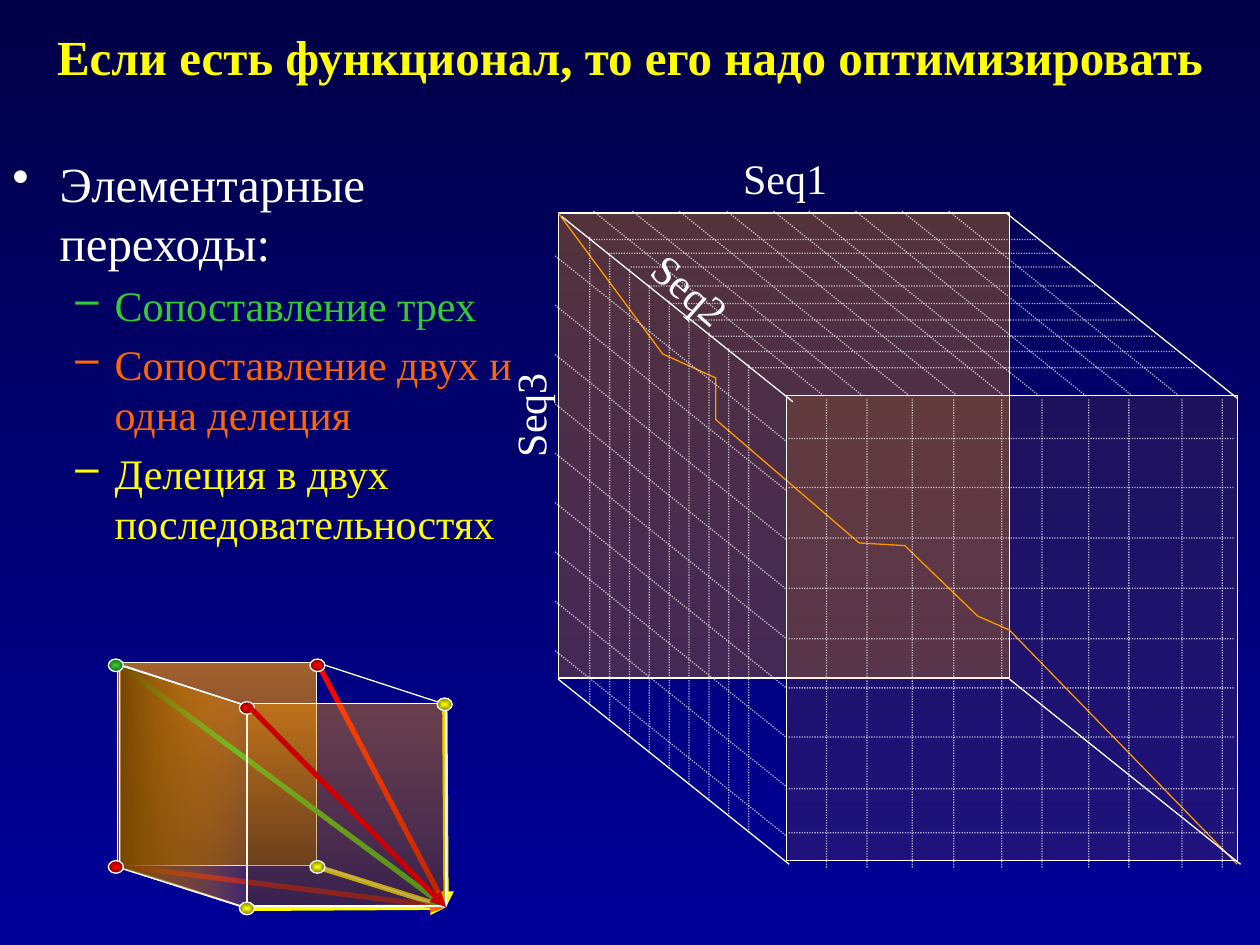
import pptx
import pptx.util
import pptx.dml.color
import pptx.enum.dml
import pptx.enum.shapes
import pptx.enum.text
import pptx.oxml
import pptx.oxml.ns
from lxml import etree

Pt = pptx.util.Pt
RGB = pptx.dml.color.RGBColor.from_string
qn = pptx.oxml.ns.qn
SHAPE = pptx.enum.shapes.MSO_SHAPE
FONT = "Times New Roman"
COLORS = {
    "night": "000047", "blue": "000099", "white": "FFFFFF",
    "yellow": "FFFF00", "olive": "767600", "red": "FF0000",
    "maroon": "760000", "crimson": "CC0000", "green": "33CC33",
    "moss": "185E18", "orange": "FF9900", "amber": "D17D00",
    "brown": "764700", "coral": "FF6600",
}

TITLE = "Если есть функционал, то его надо оптимизировать"
BULLETS = [
    ("•", "Элементарные переходы:", 28, "white", 27, 27),
    ("–", "Сопоставление трех", 24, "green", 58.5, 22.5),
    ("–", "Сопоставление двух и одна делеция", 24, "coral", 58.5, 22.5),
    ("–", "Делеция в двух последовательностях", 24, "yellow", 58.5, 22.5),
]
AXES = [("Seq1", 417.6, 83.5, 0), ("Seq2", 363.6, 147.6, 41.3),
        ("Seq3", 271.4, 218.9, 270)]

BACK_FACE = (319, 121.7, 257.8, 265.7)
FRONT_FACE = (449.3, 226.1, 257.8, 265.7)
DEPTH = (132, 105.8)
CUBE_EDGES = [(319, 388.1), (321.1, 123.8), (575.3, 122), (576.9, 388.1)]
ALIGNMENT = [(319, 121.7), (378.7, 202.3), (409, 216), (409, 239.8),
             (491, 310.3), (517, 311.8), (558.7, 352.1), (576.7, 360),
             (707, 493.9)]
GRID_COUNT = 9
SIDE_STEP = 11.35
FRONT_X = [472.3, 495.4, 521.3, 545, 572.4, 595.4, 622.1, 645.1, 675.4, 698.4]
FRONT_Y = [250.6, 278.6, 307.4, 336.2, 365, 393.1, 421.2, 450.7, 475.9]
TOP_X = [542.2, 515.5, 488.9, 462.2, 442.1, 415.4, 388.1, 361.4, 339.1]
TOP_Y = [136.8, 144.7, 152.6, 163.4, 173.5, 182.9, 192.2, 200.9, 210.2]

GOAL = (254.9, 518.4)
BACK_MOVES = [((182.2, 380.2), "red", 100), ((140.4, 519.1), "yellow", 100),
              ((254.2, 402.5), "yellow", 100), ((181.4, 495.4), "yellow", 100),
              ((67, 494.6), "red", 58)]
CELL_BACK = (67, 378.7, 113.8, 115.9)
CELL_FRONT = (141.1, 401.8, 113.8, 115.9)
CELL_SIDE = (35.3, 413.3, 139, 72.7)
CELL_DEPTH = (73, 23.8)
CELL_EDGES = [(67, 494.6), (180.9, 494.6), (67.7, 379.4), (181.4, 378.7)]
NODE_SIZE = (8.6, 7.2)
NODE_SHADES = {"yellow": "olive", "red": "maroon", "green": "moss"}
NODES = [(136.8, 515.5, "yellow"), (61.9, 491.8, "red"),
         (136.8, 401, "red"), (61.9, 376.6, "green"),
         (177.1, 376.6, "red"), (249.8, 398.9, "yellow")]


def set_alpha(clr, percent):
    if percent < 100:
        etree.SubElement(clr, qn("a:alpha"), val=str(percent * 1000))


def set_gradient(fill, names):
    fill.gradient()
    fill.gradient_angle = 270
    for stop, name in zip(fill.gradient_stops, names):
        stop.color.rgb = RGB(COLORS[name])
    fill.gradient_stops[0].position = 0
    fill.gradient_stops[1].position = 1


def add_line(s, start, end, color="white", width=0.75, alpha=100,
             dotted=False, arrow=False):
    sp = s.shapes.add_connector(pptx.enum.shapes.MSO_CONNECTOR.STRAIGHT,
                                *[Pt(v) for v in (*start, *end)])
    sp.line.width = Pt(width)
    sp.line.color.rgb = RGB(COLORS[color])
    if dotted:
        sp.line.dash_style = pptx.enum.dml.MSO_LINE.ROUND_DOT
    spPr = sp.element.spPr
    ln = spPr.find(qn("a:ln"))
    set_alpha(next(ln.iter(qn("a:srgbClr"))), alpha)
    if arrow:
        etree.SubElement(ln, qn("a:tailEnd"), type="triangle")
    etree.SubElement(spPr, qn("a:effectLst"))


def add_edges(s, starts, depth, **style):
    for x, y in starts:
        add_line(s, (x, y), (x + depth[0], y + depth[1]), **style)


def add_solid(s, kind, box, names, alphas=(100, 100), radial=False):
    sp = s.shapes.add_shape(kind, *[Pt(v) for v in box])
    sp.shadow.inherit = False
    set_gradient(sp.fill, names)
    grad = sp.element.spPr.find(qn("a:gradFill"))
    for clr, alpha in zip(grad.iter(qn("a:srgbClr")), alphas):
        set_alpha(clr, alpha)
    if radial:
        grad.remove(grad.find(qn("a:lin")))
        center = etree.SubElement(grad, qn("a:path"), path="shape")
        etree.SubElement(center, qn("a:fillToRect"),
                         l="50000", t="50000", r="50000", b="50000")
    sp.line.color.rgb = RGB(COLORS["white"])
    sp.line.width = Pt(0.75)
    return sp


def add_box(s, x, y, w, h, wrap=True):
    sp = s.shapes.add_textbox(Pt(x), Pt(y), Pt(w), Pt(h))
    sp.text_frame.word_wrap = wrap
    return sp


def add_run(p, text, size, color, bold=False):
    r = p.add_run()
    r.text = text
    r.font.name = FONT
    r.font.size = Pt(size)
    r.font.bold = bold
    r.font.color.rgb = RGB(COLORS[color])


def add_texts(s):
    tf = add_box(s, 0, 0, 720, 64).text_frame
    tf.vertical_anchor = pptx.enum.text.MSO_ANCHOR.MIDDLE
    p = tf.paragraphs[0]
    p.alignment = pptx.enum.text.PP_ALIGN.CENTER
    add_run(p, TITLE, 28, "yellow", True)

    tf = add_box(s, 0, 84.2, 300.2, 278).text_frame
    for i, (mark, text, size, color, left, hang) in enumerate(BULLETS):
        p = tf.add_paragraph() if i else tf.paragraphs[0]
        p.space_before = Pt(size * 0.2)
        p.level = 1 if i else 0
        add_run(p, text, size, color)
        pPr = p._p.get_or_add_pPr()
        pPr.set("marL", str(Pt(left)))
        pPr.set("indent", str(-Pt(hang)))
        etree.SubElement(pPr, qn("a:buChar"), char=mark)

    for text, x, y, angle in AXES:
        sp = add_box(s, x, y, 62.6, 36, wrap=False)
        sp.text_frame.auto_size = pptx.enum.text.MSO_AUTO_SIZE.SHAPE_TO_FIT_TEXT
        sp.rotation = angle
        add_run(sp.text_frame.paragraphs[0], text, 24, "white")


def add_grid(s):
    dots = {"alpha": 65, "dotted": True}
    side = [(337 + SIDE_STEP * i, 135.4 + 9.1 * i) for i in range(GRID_COUNT)]
    rows = [(317.2, 146.2 + 28.2 * i) for i in range(GRID_COUNT)]
    top = [(337.7 + SIDE_STEP * i, y) for i, y in enumerate(TOP_Y)]
    add_edges(s, side, (0, 268), **dots)
    add_edges(s, [(x, 228.2) for x in FRONT_X], (0, 268), **dots)
    add_edges(s, [(x, 120.7) for x in TOP_X] + rows, DEPTH, **dots)
    add_edges(s, [(450.7, y) for y in FRONT_Y] + top, (254.5, 0), **dots)


def add_big_cube(s):
    add_solid(s, SHAPE.RECTANGLE, BACK_FACE, ("orange", "amber"), (33, 33))
    points = [(Pt(x), Pt(y)) for x, y in ALIGNMENT]
    fb = s.shapes.build_freeform(*points[0])
    fb.add_line_segments(points[1:], close=False)
    sp = fb.convert_to_shape()
    sp.shadow.inherit = False
    sp.fill.background()
    sp.line.color.rgb = RGB(COLORS["orange"])
    sp.line.width = Pt(0.75)
    add_solid(s, SHAPE.RECTANGLE, FRONT_FACE, ("orange", "amber"), (12, 15))
    add_edges(s, CUBE_EDGES, DEPTH)


def add_cell(s):
    wood = ("orange", "brown")
    add_solid(s, SHAPE.RECTANGLE, CELL_BACK, wood, (64, 64))
    add_edges(s, CELL_EDGES, CELL_DEPTH)
    add_line(s, (67.7, 379.4), GOAL, "green", 3, arrow=True)
    add_solid(s, SHAPE.RECTANGLE, CELL_FRONT, wood, (42, 48))
    add_node(s, 177.1, 491.8, "yellow")
    sp = add_solid(s, SHAPE.PARALLELOGRAM, CELL_SIDE, wood, (24, 100))
    sp.adjustments[0] = 0.32
    sp.rotation = 90
    for node in NODES:
        add_node(s, *node)
    add_line(s, (141.1, 402.5), GOAL, "crimson", 3, arrow=True)


def add_node(s, x, y, color):
    add_solid(s, SHAPE.OVAL, (x, y, *NODE_SIZE),
              (color, NODE_SHADES[color]), radial=True)


def main():
    prs = pptx.Presentation()
    prs.slide_width, prs.slide_height = Pt(720), Pt(540)
    s = prs.slides.add_slide(prs.slide_layouts[6])
    set_gradient(s.background.fill, ("night", "blue"))
    for start, color, alpha in BACK_MOVES:
        add_line(s, start, GOAL, color, 3, alpha, arrow=True)
    add_big_cube(s)
    add_texts(s)
    add_grid(s)
    add_cell(s)
    prs.save("out.pptx")


if __name__ == "__main__":
    main()
